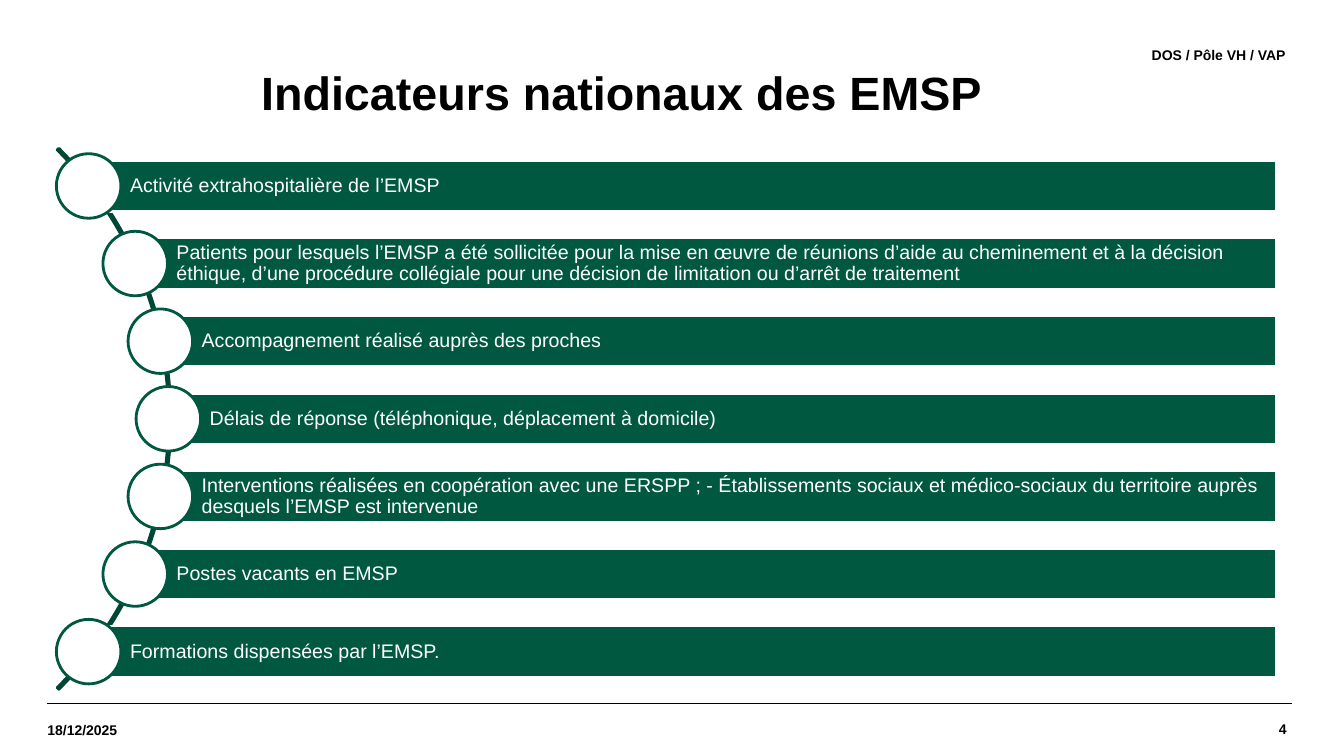
from math import sqrt

from pptx import Presentation
from pptx.dml.color import RGBColor
from pptx.enum.shapes import MSO_CONNECTOR, MSO_SHAPE
from pptx.enum.text import MSO_ANCHOR, PP_ALIGN
from pptx.oxml.ns import qn
from pptx.util import Inches, Pt
from lxml import etree

LEFT, RIGHT = PP_ALIGN.LEFT, PP_ALIGN.RIGHT
MIDDLE = MSO_ANCHOR.MIDDLE
STRAIGHT = MSO_CONNECTOR.STRAIGHT
RECTANGLE, OVAL, BLOCK_ARC = MSO_SHAPE.RECTANGLE, MSO_SHAPE.OVAL, MSO_SHAPE.BLOCK_ARC

BLACK, WHITE, GREEN, DARK_GREEN = "000000", "FFFFFF", "005841", "004634"
FONT = "Arial"

INDICATORS = [
    "Activité extrahospitalière de l’EMSP",
    "Patients pour lesquels l’EMSP a été sollicitée pour la mise en œuvre de réunions d’aide au cheminement et à la décision éthique, d’une procédure collégiale pour une décision de limitation ou d’arrêt de traitement",
    "Accompagnement réalisé auprès des proches",
    "Délais de réponse (téléphonique, déplacement à domicile)",
    "Interventions réalisées en coopération avec une ERSPP ; - Établissements sociaux et médico-sociaux du territoire auprès desquels l’EMSP est intervenue",
    "Postes vacants en EMSP",
    "Formations dispensées par l’EMSP.",
]
NO_MARGINS = (0, 0, 0, 0)
LABELS = [
    ("4", (10.79, 6.98, 1.97, 0.52), 10, RIGHT, NO_MARGINS),
    ("18/12/2025", (0.47, 7, 1.71, 0.5), 10, LEFT, NO_MARGINS),
    ("Indicateurs nationaux des EMSP", (2.47, 0.55, 10.06, 0.79), 33.3, LEFT, (0.12, 0.05, 0.1, 0.05)),
    ("DOS / Pôle VH / VAP", (4.18, 0.29, 8.57, 0.52), 10, RIGHT, NO_MARGINS),
]
FOOTER_RULES = [(0.47, 12.76), (0.52, 12.81)]
FOOTER_Y = 6.98

ARC_CENTER_X, ARC_CENTER_Y = -2.1, 4.155
ARC_RADIUS, DOT_ORBIT = 3.795, 3.77
ROW_STEP, BAR_HEIGHT, BAR_RIGHT, DOT_SIZE = 0.77, 0.51, 12.66, 0.64
BAR_MARGINS = (0.41, 0.04, 0.04, 0.04)

presentation = Presentation()
presentation.slide_width, presentation.slide_height = Inches(13.33), Inches(7.5)
slide = presentation.slides.add_slide(presentation.slide_layouts[6])


def color(hex_value):
    return RGBColor.from_string(hex_value)


def add_outlined(kind, box, fill, line):
    shape = slide.shapes.add_shape(kind, *map(Inches, box))
    shape.shadow.inherit = False
    if fill:
        shape.fill.solid()
        shape.fill.fore_color.rgb = color(fill)
    else:
        shape.fill.background()
    shape.line.color.rgb = color(line)
    shape.line.width = Pt(2)
    return shape


def write(shape, text, size, text_color, bold, align, margins, spacing):
    frame = shape.text_frame
    frame.word_wrap = True
    frame.vertical_anchor = MIDDLE
    frame.margin_left, frame.margin_top, frame.margin_right, frame.margin_bottom = map(Inches, margins)
    paragraph = frame.paragraphs[0]
    paragraph.text = text
    paragraph.alignment = align
    paragraph.line_spacing = spacing
    paragraph.font.name = FONT
    paragraph.font.size = Pt(size)
    paragraph.font.bold = bold
    paragraph.font.color.rgb = color(text_color)


for start, end in FOOTER_RULES:
    rule = slide.shapes.add_connector(
        STRAIGHT, Inches(start), Inches(FOOTER_Y), Inches(end), Inches(FOOTER_Y))
    rule.line.color.rgb = color(BLACK)
    rule.line.width = Pt(0.8)
    etree.SubElement(rule._element.spPr, qn("a:effectLst"))

for text, box, size, align, margins in LABELS:
    label = slide.shapes.add_textbox(*map(Inches, box))
    write(label, text, size, BLACK, True, align, margins, 0.9)

arc_box = (ARC_CENTER_X - ARC_RADIUS, ARC_CENTER_Y - ARC_RADIUS, 2 * ARC_RADIUS, 2 * ARC_RADIUS)
arc = add_outlined(BLOCK_ARC, arc_box, None, DARK_GREEN)
for index, value in enumerate((189, 27, 0.003)):
    arc.adjustments[index] = value

for row, indicator in enumerate(INDICATORS):
    offset = (row - (len(INDICATORS) - 1) / 2) * ROW_STEP
    center_x = ARC_CENTER_X + sqrt(DOT_ORBIT ** 2 - offset ** 2)
    center_y = ARC_CENTER_Y + offset
    bar_box = (center_x, center_y - BAR_HEIGHT / 2, BAR_RIGHT - center_x, BAR_HEIGHT)
    bar = add_outlined(RECTANGLE, bar_box, GREEN, WHITE)
    write(bar, indicator, 14, WHITE, False, LEFT, BAR_MARGINS, 0.9)
    dot_box = (center_x - DOT_SIZE / 2, center_y - DOT_SIZE / 2, DOT_SIZE, DOT_SIZE)
    add_outlined(OVAL, dot_box, WHITE, GREEN)

presentation.save("out.pptx")
